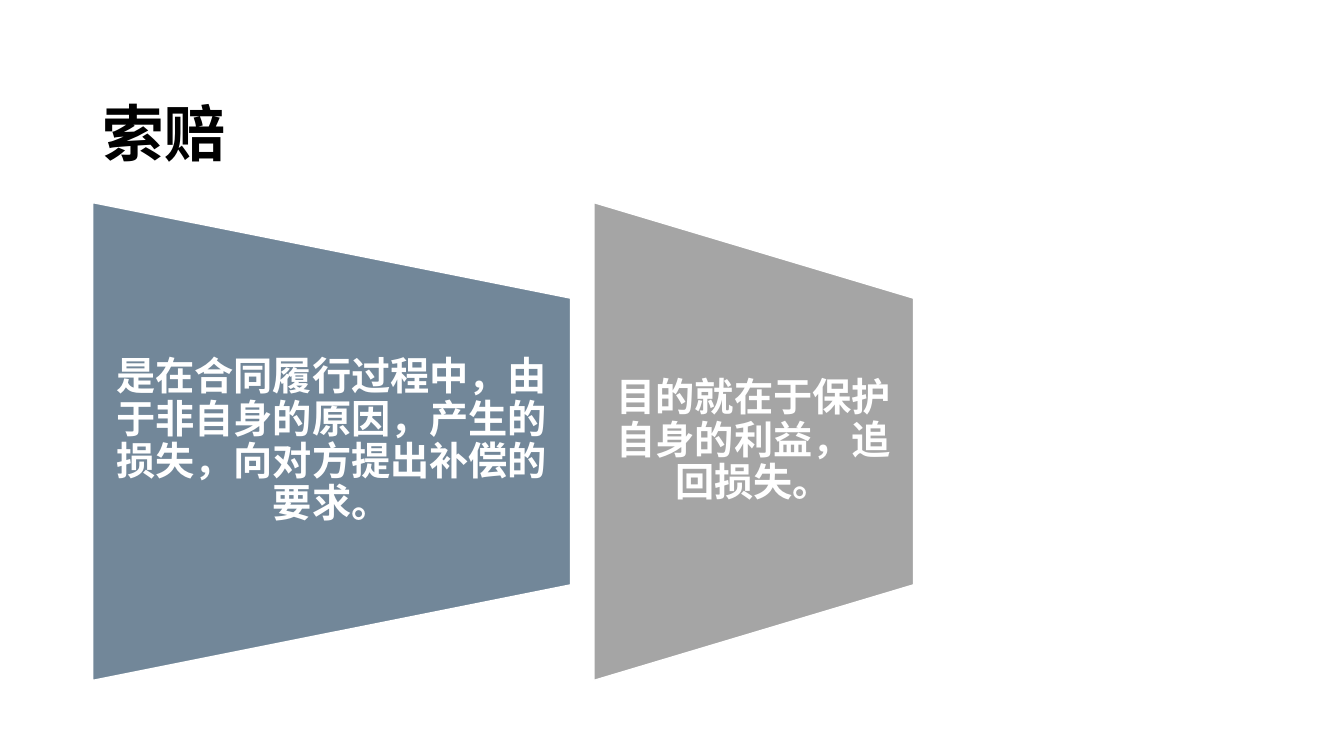
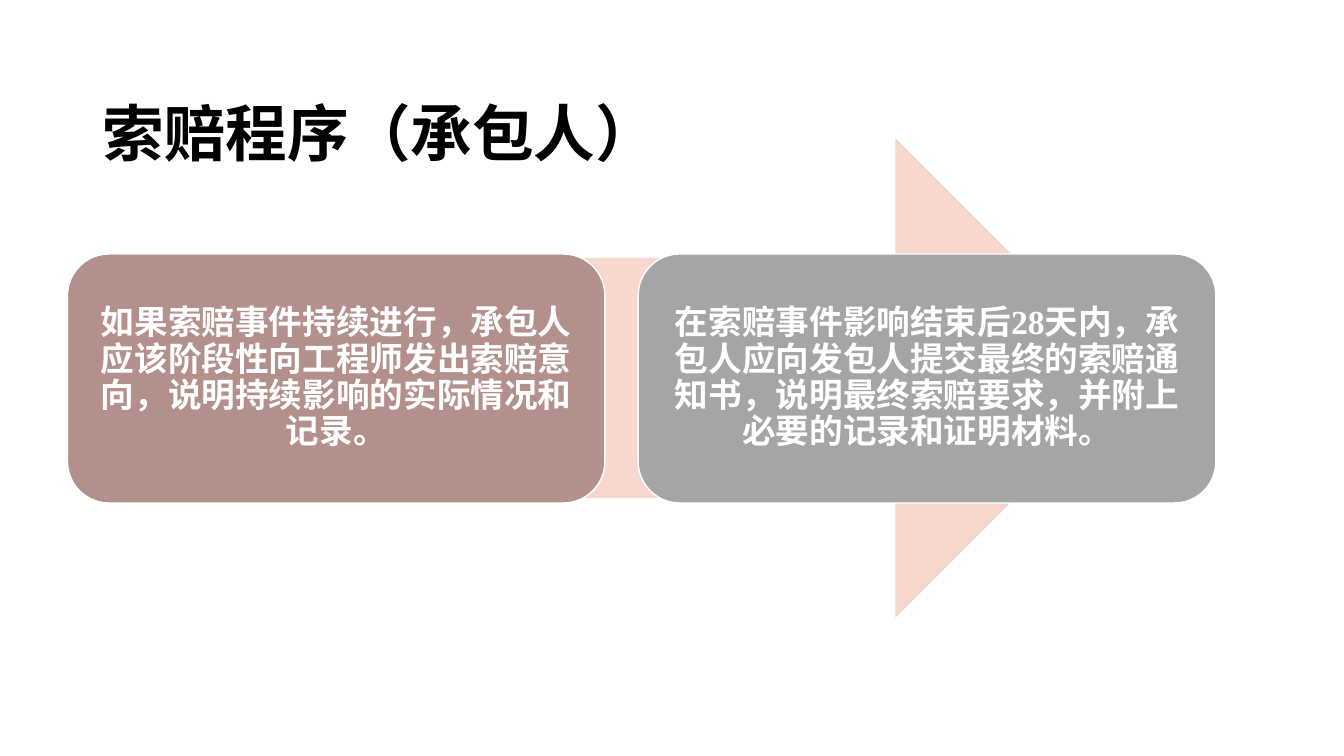
from dataclasses import dataclass

from pptx import Presentation
from pptx.dml.color import RGBColor
from pptx.enum.lang import MSO_LANGUAGE_ID
from pptx.enum.shapes import MSO_SHAPE
from pptx.enum.text import MSO_ANCHOR, PP_ALIGN
from pptx.shapes.autoshape import Shape
from pptx.slide import Slide
from pptx.util import Inches, Pt

TRAPEZOID = MSO_SHAPE.FLOWCHART_MANUAL_OPERATION
ROUNDED = MSO_SHAPE.ROUNDED_RECTANGLE
ARROW = MSO_SHAPE.RIGHT_ARROW
MIDDLE = MSO_ANCHOR.MIDDLE
CENTER = PP_ALIGN.CENTER
JUSTIFY = PP_ALIGN.JUSTIFY
CHINESE = MSO_LANGUAGE_ID.SIMPLIFIED_CHINESE

FONT = "Times New Roman"
BLACK = "000000"
WHITE = "FFFFFF"
BLUE = "728799"
GRAY = "A5A5A5"
ROSE = "B3908C"
PEACH = "F8D7CE"

PANEL_TOP, PANEL_HEIGHT = 2.01, 4.74
PANEL_TEXT_TOP, PANEL_TEXT_HEIGHT = 2.95, 2.86
STEP_TOP, STEP_HEIGHT = 2.52, 2.47


@dataclass(frozen=True)
class Block:
    """A coloured statement with its horizontal extent in inches."""
    left: float
    width: float
    color: str
    text: str


DEFINITION = [
    Block(0.92, 4.74, BLUE, "是在合同履行过程中，由于非自身的原因，产生的损失，向对方提出补偿的要求。"),
    Block(5.89, 3.17, GRAY, "目的就在于保护自身的利益，追回损失。"),
]
PROCEDURE = [
    Block(0.67, 5.33, ROSE,
          "如果索赔事件持续进行，承包人应该阶段性向工程师发出索赔意向，说明持续影响的实际情况和记录。"),
    Block(6.33, 5.73, GRAY,
          "在索赔事件影响结束后28天内，承包人应向发包人提交最终的索赔通知书，"
          "说明最终索赔要求，并附上必要的记录和证明材料。"),
]


def rgb(color: str) -> RGBColor:
    return RGBColor.from_string(color)


def write(holder: Shape, text: str, size: int, color: str = WHITE,
          align: PP_ALIGN = CENTER, spacing: float = 0.9) -> None:
    frame = holder.text_frame
    frame.word_wrap = True
    frame.vertical_anchor = MIDDLE
    paragraph = frame.paragraphs[0]
    paragraph.text = text
    paragraph.alignment = align
    paragraph.line_spacing = spacing
    font = paragraph.font
    font.name = FONT
    font.size = Pt(size)
    font.bold = True
    font.color.rgb = rgb(color)
    font.language_id = CHINESE


def add_filled(slide: Slide, preset: MSO_SHAPE, left: float, top: float,
               width: float, height: float, fill: str, outlined: bool = True) -> Shape:
    shape = slide.shapes.add_shape(
        preset, Inches(left), Inches(top), Inches(width), Inches(height))
    shape.shadow.inherit = False
    shape.fill.solid()
    shape.fill.fore_color.rgb = rgb(fill)
    if outlined:
        shape.line.color.rgb = rgb(WHITE)
        shape.line.width = Pt(1)
    else:
        shape.line.fill.background()
    return shape


def add_panel(slide: Slide, block: Block) -> None:
    """Draw a trapezoid narrowing to the right, with upright text over it."""
    left = block.left + (block.width - PANEL_HEIGHT) / 2
    top = PANEL_TOP + (PANEL_HEIGHT - block.width) / 2
    trapezoid = add_filled(slide, TRAPEZOID, left, top, PANEL_HEIGHT, block.width, block.color)
    trapezoid.rotation = 270
    statement = slide.shapes.add_textbox(
        Inches(block.left), Inches(PANEL_TEXT_TOP),
        Inches(block.width), Inches(PANEL_TEXT_HEIGHT))
    frame = statement.text_frame
    frame.margin_left = frame.margin_right = Inches(0.19)
    frame.margin_top = frame.margin_bottom = 0
    write(statement, block.text, 28)


def add_step(slide: Slide, block: Block) -> None:
    step = add_filled(slide, ROUNDED, block.left, STEP_TOP, block.width, STEP_HEIGHT, block.color)
    frame = step.text_frame
    frame.margin_left = frame.margin_right = Inches(0.1)
    frame.margin_top = frame.margin_bottom = Inches(0.1)
    write(step, block.text, 24)


def add_titled_slide(deck: Presentation, text: str) -> Slide:
    slide = deck.slides.add_slide(deck.slide_layouts[6])
    title = slide.shapes.add_textbox(Inches(0.92), Inches(0.4), Inches(11.5), Inches(1.45))
    write(title, text, 44, BLACK, JUSTIFY, 1.5)
    return slide


def main() -> None:
    deck = Presentation()
    deck.slide_width = Inches(13.33)
    deck.slide_height = Inches(7.5)

    definition = add_titled_slide(deck, "索赔")
    for block in DEFINITION:
        add_panel(definition, block)

    procedure = add_titled_slide(deck, "索赔程序（承包人）")
    add_filled(procedure, ARROW, 1.48, 1.37, 9.78, 4.76, PEACH, outlined=False)
    for block in PROCEDURE:
        add_step(procedure, block)

    deck.save("out.pptx")


if __name__ == "__main__":
    main()
